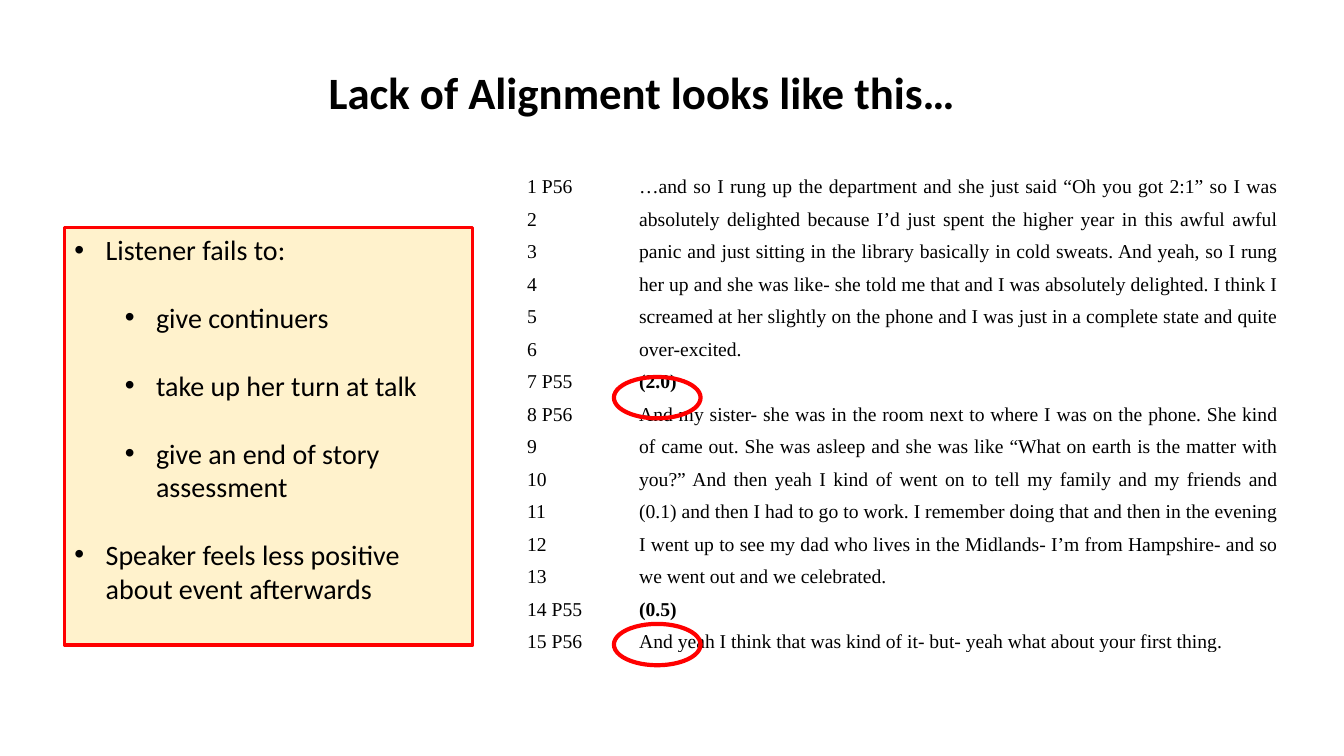
from dataclasses import dataclass

import pptx
import pptx.dml.color
import pptx.enum.shapes
import pptx.enum.text
import pptx.oxml.ns
import pptx.util
from lxml import etree

COLORS = {"text": "000000", "panel": "FFF2CC", "accent": "FF0000"}
SLIDE_WIDTH = pptx.util.Inches(13.333)
SLIDE_HEIGHT = pptx.util.Inches(7.5)
SHAPES = pptx.enum.shapes.MSO_SHAPE
ALIGN = pptx.enum.text.PP_ALIGN
ANCHOR = pptx.enum.text.MSO_ANCHOR


@dataclass(frozen=True)
class Box:
    """A frame in percent of the slide's width and height."""
    left: float
    top: float
    width: float
    height: float

    def emu(self) -> tuple[int, int, int, int]:
        return (across(self.left), down(self.top),
                across(self.width), down(self.height))


@dataclass(frozen=True)
class Point:
    text: str
    level: int = 0


@dataclass(frozen=True)
class Turn:
    text: str
    bold: bool = False


TITLE_BOX = Box(20.7, 7.87, 54.15, 8.53)
PANEL_BOX = Box(4.8, 30.13, 30.38, 55.2)
TRANSCRIPT_BOX = Box(38.7, 21.87, 56.93, 60.27)
COLUMN_SHARES = (8.33, 48.6)
PAUSE_BOXES = [Box(45.68, top, 6.45, 5.47) for top in (49.87, 82.53)]

POINTS = [
    Point("Listener fails to:"),
    Point("give continuers", 1),
    Point("take up her turn at talk", 1),
    Point("give an end of story assessment", 1),
    Point("Speaker feels less positive about event afterwards"),
]
LINE_COUNT = 15
SPEAKERS = {1: "P56", 7: "P55", 8: "P56", 14: "P55", 15: "P56"}
LINE_LABELS = [Turn(f"{line} {SPEAKERS.get(line, '')}".strip())
               for line in range(1, LINE_COUNT + 1)]
TURNS = [
    Turn("…and so I rung up the department and she just said “Oh you got 2:1” "
         "so I was absolutely delighted because I’d just spent the higher year "
         "in this awful awful panic and just sitting in the library basically "
         "in cold sweats. And yeah, so I rung her up and she was like- she told "
         "me that and I was absolutely delighted. I think I screamed at her "
         "slightly on the phone and I was just in a complete state and quite "
         "over-excited."),
    Turn("(2.0)", bold=True),
    Turn("And my sister- she was in the room next to where I was on the phone. "
         "She kind of came out. She was asleep and she was like “What on earth "
         "is the matter with you?” And then yeah I kind of went on to tell my "
         "family and my friends and (0.1) and then I had to go to work. I "
         "remember doing that and then in the evening I went up to see my dad "
         "who lives in the Midlands- I’m from Hampshire- and so we went out and "
         "we celebrated."),
    Turn("(0.5)", bold=True),
    Turn("And yeah I think that was kind of it- but- yeah what about your first "
         "thing."),
]


def across(share: float) -> int:
    return round(SLIDE_WIDTH * share / 100)


def down(share: float) -> int:
    return round(SLIDE_HEIGHT * share / 100)


def rgb(name: str) -> pptx.dml.color.RGBColor:
    return pptx.dml.color.RGBColor.from_string(COLORS[name])


def set_font(paragraph, name: str, size: float, bold: bool = False) -> None:
    font = paragraph.font
    font.name, font.size, font.bold = name, pptx.util.Pt(size), bold
    font.color.rgb = rgb("text")


def paragraph_at(frame, index: int):
    return frame.add_paragraph() if index else frame.paragraphs[0]


def add_title(slide) -> None:
    title = slide.shapes.title
    title.left, title.top, title.width, title.height = TITLE_BOX.emu()
    title.text_frame.text = "Lack of Alignment looks like this…"
    title.text_frame.auto_size = pptx.enum.text.MSO_AUTO_SIZE.NONE
    heading = title.text_frame.paragraphs[0]
    heading.alignment = ALIGN.CENTER
    set_font(heading, "Calibri", 32, bold=True)


def add_outlined(slide, preset: SHAPES, box: Box, line_width: float):
    shape = slide.shapes.add_shape(preset, *box.emu())
    shape.shadow.inherit = False
    shape.fill.background()
    shape.line.color.rgb = rgb("accent")
    shape.line.width = pptx.util.Pt(line_width)
    return shape


def set_bullet(paragraph, level: int) -> None:
    paragraph.level = level
    properties = paragraph._p.get_or_add_pPr()
    hanging = pptx.util.Inches(0.31)
    properties.set("marL", str(hanging + level * pptx.util.Inches(0.5)))
    properties.set("indent", str(-hanging))
    font = etree.SubElement(properties, pptx.oxml.ns.qn("a:buFont"))
    font.set("typeface", "Arial")
    bullet = etree.SubElement(properties, pptx.oxml.ns.qn("a:buChar"))
    bullet.set("char", "•")


def add_panel(slide) -> None:
    panel = add_outlined(slide, SHAPES.RECTANGLE, PANEL_BOX, 2.5)
    panel.fill.solid()
    panel.fill.fore_color.rgb = rgb("panel")
    frame = panel.text_frame
    frame.word_wrap = True
    frame.vertical_anchor = ANCHOR.TOP
    for index, point in enumerate(POINTS):
        paragraph = paragraph_at(frame, index)
        paragraph.text = point.text
        paragraph.alignment = ALIGN.LEFT
        paragraph.space_after = pptx.util.Pt(24.4)
        set_bullet(paragraph, point.level)
        set_font(paragraph, "Calibri", 20)


def fill_cell(cell, turns: list[Turn], alignment: ALIGN) -> None:
    cell.fill.background()
    cell.margin_left = cell.margin_right = pptx.util.Inches(0.07)
    cell.margin_top = cell.margin_bottom = 0
    for index, turn in enumerate(turns):
        paragraph = paragraph_at(cell.text_frame, index)
        paragraph.text = turn.text
        paragraph.alignment = alignment
        paragraph.line_spacing = 1.5
        set_font(paragraph, "Times New Roman", 14, turn.bold)


def add_transcript(slide) -> None:
    transcript = slide.shapes.add_table(
        1, len(COLUMN_SHARES), *TRANSCRIPT_BOX.emu()).table
    transcript.first_row = transcript.horz_banding = False
    for column, share in zip(transcript.columns, COLUMN_SHARES):
        column.width = across(share)
    fill_cell(transcript.cell(0, 0), LINE_LABELS, ALIGN.LEFT)
    fill_cell(transcript.cell(0, 1), TURNS, ALIGN.JUSTIFY)


def main() -> None:
    presentation = pptx.Presentation()
    presentation.slide_width = SLIDE_WIDTH
    presentation.slide_height = SLIDE_HEIGHT
    title_only = presentation.slide_layouts.get_by_name("Title Only")
    slide = presentation.slides.add_slide(title_only)
    add_transcript(slide)
    add_title(slide)
    add_panel(slide)
    for box in PAUSE_BOXES:
        add_outlined(slide, SHAPES.OVAL, box, 3)
    presentation.save("out.pptx")


if __name__ == "__main__":
    main()
